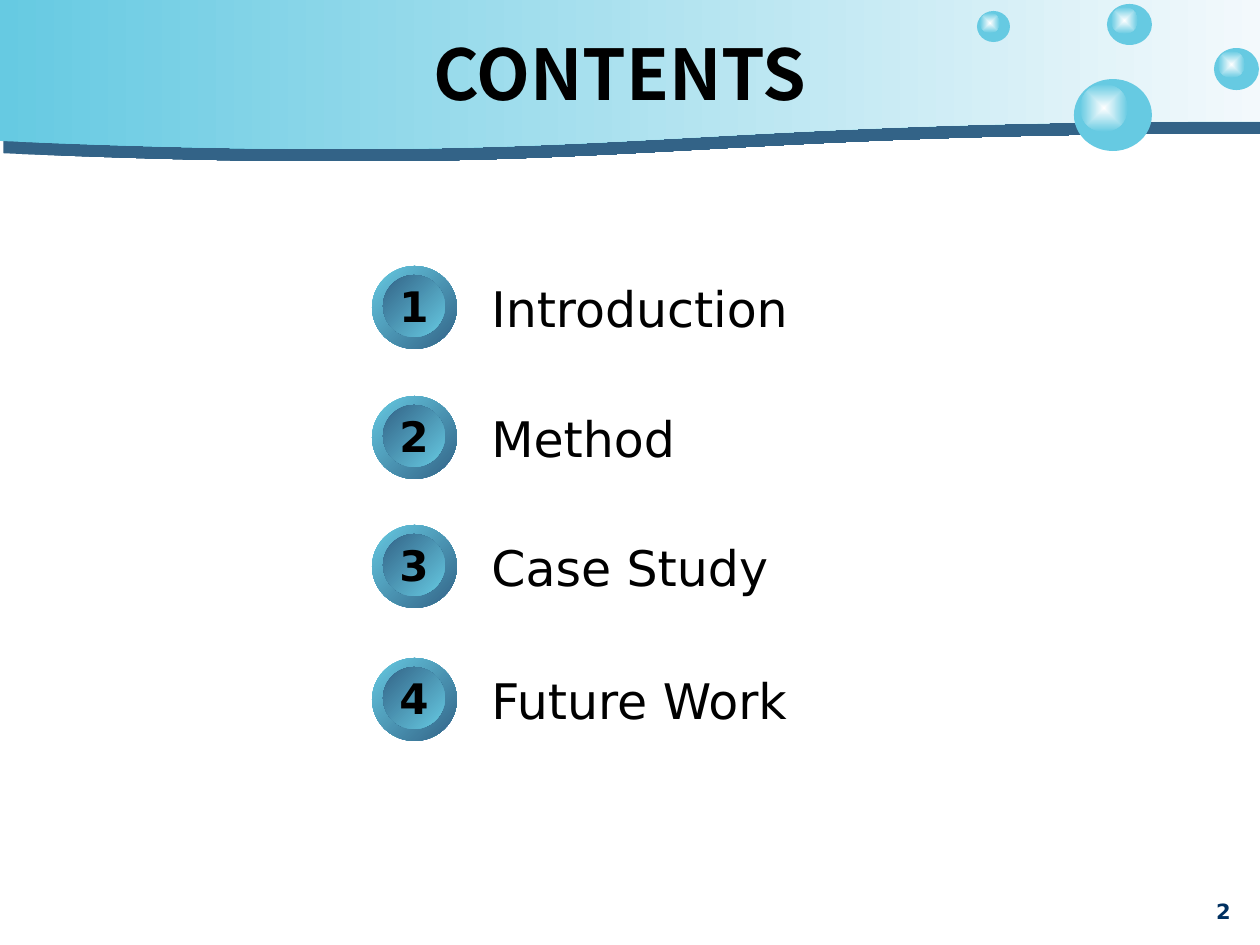
from lxml import etree
from pptx import Presentation
from pptx.dml.color import RGBColor
from pptx.enum.shapes import MSO_SHAPE
from pptx.enum.text import MSO_ANCHOR, PP_ALIGN
from pptx.oxml.ns import qn
from pptx.util import Emu, Pt

PX = 914400 // 126
TITLE_ONLY = 5
OVAL = MSO_SHAPE.OVAL
WAVE = MSO_SHAPE.FLOWCHART_DOCUMENT
MIDDLE = MSO_ANCHOR.MIDDLE
TOP = MSO_ANCHOR.TOP
LEFT = PP_ALIGN.LEFT
CENTER = PP_ALIGN.CENTER

AQUA = RGBColor(0x66, 0xCA, 0xE2)
PALE = RGBColor(0xF3, 0xF9, 0xFC)
STEEL = RGBColor(0x33, 0x63, 0x87)
NAVY = RGBColor(0x00, 0x30, 0x60)
WHITE = RGBColor(0xFF, 0xFF, 0xFF)
BLACK = RGBColor(0x00, 0x00, 0x00)

BODY_FONT = "DejaVu Sans"
TITLE_FONT = "Noto Sans CJK SC"

BUBBLES = [
    (1074, 79, 78, 72),
    (1214, 48, 45, 42),
    (1107, 4, 45, 41),
    (977, 11, 33, 31),
]
TOPICS = [
    ("Introduction", 266),
    ("Method", 396),
    ("Case Study", 525),
    ("Future Work", 658),
]


def px(*lengths):
    return [Emu(round(length) * PX) for length in lengths]


def add_plain_shape(shapes, preset, box):
    shape = shapes.add_shape(preset, *px(*box))
    shape.shadow.inherit = False
    shape.line.fill.background()
    return shape


def fill_gradient(shape, start, end, angle=0):
    shape.fill.gradient()
    shape.fill.gradient_angle = angle
    for stop, color in zip(shape.fill.gradient_stops, (start, end)):
        stop.color.rgb = color


def make_gradient_radial(shape):
    linear = shape.element.spPr.find(qn("a:gradFill")).find(qn("a:lin"))
    radial = etree.Element(qn("a:path"))
    radial.set("path", "shape")
    center = etree.SubElement(radial, qn("a:fillToRect"))
    for side in "ltrb":
        center.set(side, "50000")
    linear.getparent().replace(linear, radial)


def add_offset_shadow(shape, color, distance, degrees):
    effects = shape.element.spPr.find(qn("a:effectLst"))
    shadow = etree.SubElement(effects, qn("a:outerShdw"))
    shadow.set("dist", str(Pt(distance)))
    shadow.set("dir", str(degrees * 60000))
    shadow.set("algn", "ctr")
    shadow.set("rotWithShape", "0")
    etree.SubElement(shadow, qn("a:srgbClr")).set("val", str(color))


def write(shape, text, size, color=BLACK, font=BODY_FONT, bold=False,
          align=LEFT, anchor=MIDDLE):
    frame = shape.text_frame
    frame.text = text
    frame.vertical_anchor = anchor
    frame.word_wrap = True
    paragraph = frame.paragraphs[0]
    paragraph.alignment = align
    style = paragraph.runs[0].font
    style.name = font
    style.size = Pt(size)
    style.bold = bold
    style.color.rgb = color


def add_banner(slide):
    banner = add_plain_shape(slide.shapes, WAVE, (0, 0, 1260, 151))
    fill_gradient(banner, AQUA, PALE)
    add_offset_shadow(banner, STEEL, 7.3, 74)


def add_bubble(slide, left, top, width, height):
    group = slide.shapes.add_group_shape()
    bubble = add_plain_shape(group.shapes, OVAL, (left, top, width, height))
    bubble.fill.solid()
    bubble.fill.fore_color.rgb = AQUA
    glow_size = width * 0.61
    glow_box = (left + width * 0.08, top + height * 0.07, glow_size, glow_size)
    glow = add_plain_shape(group.shapes, OVAL, glow_box)
    fill_gradient(glow, WHITE, AQUA)
    make_gradient_radial(glow)


def add_topic(slide, number, topic, top):
    label = slide.shapes.add_textbox(*px(479, top + 5, 788, 73))
    write(label, topic, 28)
    group = slide.shapes.add_group_shape()
    ring = add_plain_shape(group.shapes, OVAL, (372, top, 85, 83))
    fill_gradient(ring, AQUA, STEEL, 315)
    badge = add_plain_shape(group.shapes, OVAL, (383, top + 9, 62, 62))
    fill_gradient(badge, STEEL, AQUA, 315)
    write(badge, str(number), 24, bold=True, align=CENTER)
    frame = badge.text_frame
    frame.word_wrap = False
    frame.margin_left = frame.margin_right = 0
    frame.margin_top = frame.margin_bottom = 0


def add_page_number(slide):
    page_number = slide.shapes.add_textbox(*px(1187, 892, 73, 42))
    write(page_number, "2", 12, NAVY, bold=True, align=CENTER, anchor=TOP)


def place_title(slide):
    title = slide.shapes.title
    title.left, title.top, title.width, title.height = px(53, 30, 1134, 84)
    write(title, "CONTENTS", 40, font=TITLE_FONT, bold=True, align=CENTER)
    title.element.getparent().append(title.element)


def main():
    presentation = Presentation()
    presentation.slide_width, presentation.slide_height = px(1260, 945)
    slide = presentation.slides.add_slide(presentation.slide_layouts[TITLE_ONLY])
    add_banner(slide)
    for bubble in BUBBLES:
        add_bubble(slide, *bubble)
    add_page_number(slide)
    place_title(slide)
    for number, (topic, top) in enumerate(TOPICS, start=1):
        add_topic(slide, number, topic, top)
    presentation.save("out.pptx")


if __name__ == "__main__":
    main()
